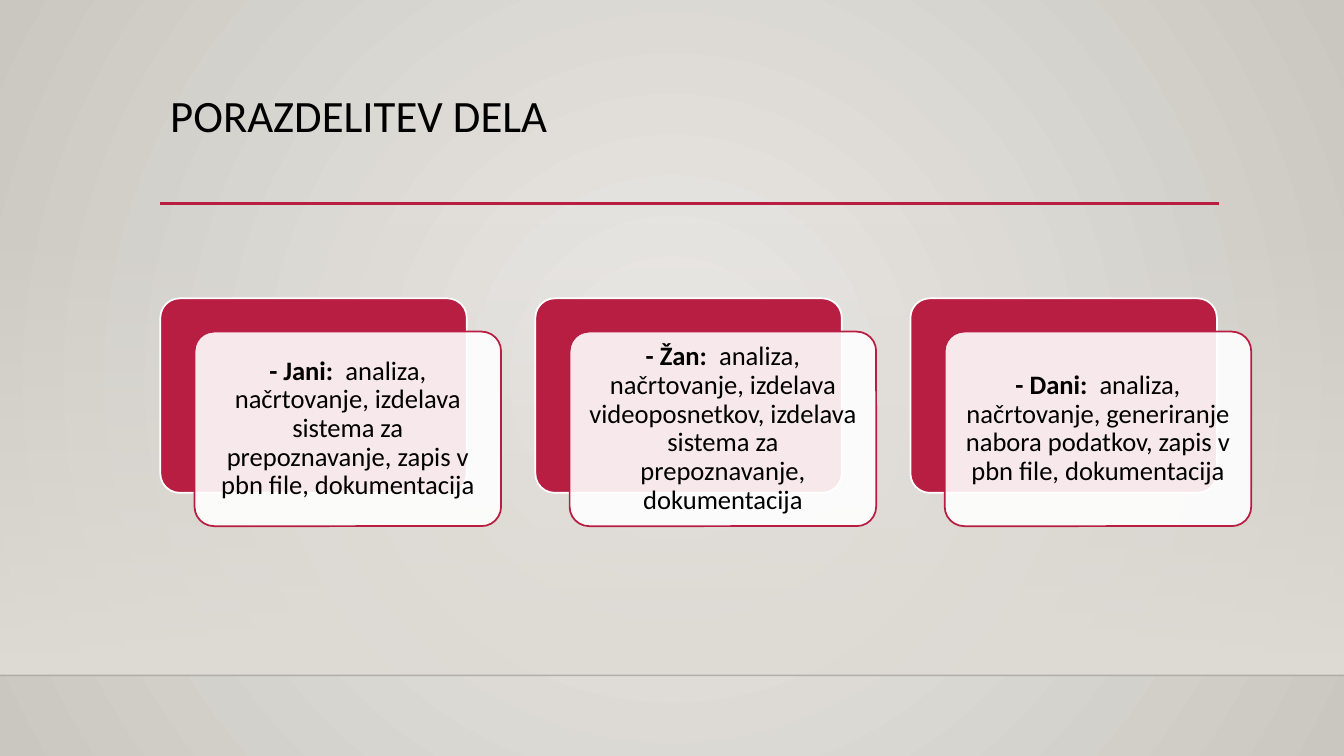
import pptx
import pptx.util
import pptx.dml.color
import pptx.enum.shapes
import pptx.enum.text
import pptx.oxml
import pptx.oxml.ns

WIDE, HIGH = 13.33, 7.5
EDGE = 1.59
RED = "B71E42"
FONT = "Calibri"
TASKS = [
    ("- Jani:  ", "analiza, načrtovanje, izdelava sistema za prepoznavanje, "
                  "zapis v pbn file, dokumentacija"),
    ("- Žan:  ", "analiza, načrtovanje, izdelava videoposnetkov, izdelava "
                 "sistema za prepoznavanje, dokumentacija"),
    ("- Dani:  ", "analiza, načrtovanje, generiranje nabora podatkov, "
                  "zapis v pbn file, dokumentacija"),
]

qn = pptx.oxml.ns.qn
inch = pptx.util.Inches
Shape = pptx.enum.shapes.MSO_SHAPE
Align = pptx.enum.text.PP_ALIGN
Anchor = pptx.enum.text.MSO_ANCHOR


def paint(color, code):
    """Set a colour from a hex string."""
    color.rgb = pptx.dml.color.RGBColor.from_string(code)


def fade(root, share):
    """Set the opacity, in percent, of the first colour under root."""
    color = next(root.iter(qn("a:srgbClr")))
    color.append(color.makeelement(qn("a:alpha"), {"val": str(share * 1000)}))


def blend(root, stops, shade):
    """Give the gradient under root its stops and its direction."""
    old = next(root.iter(qn("a:gradFill")))
    marks = "".join(
        f'<a:gs pos="{pos * 1000}"><a:srgbClr val="{code}">'
        f'<a:alpha val="{share * 1000}"/></a:srgbClr></a:gs>'
        for pos, code, share in stops)
    new = pptx.oxml.parse_xml(
        f'<a:gradFill {pptx.oxml.ns.nsdecls("a")} rotWithShape="1">'
        f'<a:gsLst>{marks}</a:gsLst>{shade}</a:gradFill>')
    old.getparent().replace(old, new)


def rule(slide, left, top, width, code, weight):
    """Draw a level line and return it."""
    line = slide.shapes.add_connector(
        pptx.enum.shapes.MSO_CONNECTOR.STRAIGHT,
        inch(left), inch(top), inch(left + width), inch(top))
    paint(line.line.color, code)
    line.line.width = pptx.util.Pt(weight)
    props = line._element.spPr
    props.append(props.makeelement(qn("a:effectLst"), {}))
    return line


def write(frame, runs, size, align, anchor, inset):
    """Fill a text frame with one paragraph of (text, bold) runs."""
    frame.word_wrap = True
    frame.vertical_anchor = anchor
    frame.margin_left = frame.margin_right = inch(inset[0])
    frame.margin_top = frame.margin_bottom = inch(inset[1])
    para = frame.paragraphs[0]
    para.alignment = align
    para.line_spacing = 0.9
    for text, bold in runs:
        run = para.add_run()
        run.text = text
        run.font.name = FONT
        run.font.size = pptx.util.Pt(size)
        run.font.bold = bold
        paint(run.font.color, "000000")


def stage(slide):
    """Paint the backdrop, the wall and the floor line."""
    slide.background.fill.gradient()
    blend(slide._element, [(0, "ECEAE7", 100), (100, "CAC7C1", 100)],
          '<a:path path="circle"><a:fillToRect l="50000" t="50000" '
          'r="50000" b="50000"/></a:path>')
    top, floor = 2.21, 6.7
    wall = slide.shapes.add_shape(
        Shape.RECTANGLE, 0, inch(top), inch(WIDE), inch(floor - top))
    wall.shadow.inherit = False
    wall.line.fill.background()
    wall.fill.gradient()
    blend(wall._element, [(0, "DFDBD5", 0), (100, "DFDBD5", 100)],
          '<a:lin ang="5400000" scaled="0"/>')
    fade(rule(slide, 0, floor, WIDE, "000001", 1)._element, 20)


def head(slide, left, top, width, height):
    """Place the title and the red line under it."""
    rule(slide, left, top + height, width, RED, 2.5)
    box = slide.shapes.add_textbox(
        inch(left), inch(top), inch(width), inch(height))
    write(box.text_frame, [("PORAZDELITEV DELA", False)], 32,
          Align.LEFT, Anchor.TOP, (0.1, 0.05))


def plate(slide, left, top, width, height, fill, edge):
    """Draw one rounded plate and return it."""
    shape = slide.shapes.add_shape(
        Shape.ROUNDED_RECTANGLE,
        inch(left), inch(top), inch(width), inch(height))
    shape.adjustments[0] = 0.1
    shape.shadow.inherit = False
    shape.fill.solid()
    paint(shape.fill.fore_color, fill)
    paint(shape.line.color, edge)
    shape.line.width = pptx.util.Pt(1.25)
    return shape


def cards(slide, left, top, width, height):
    """Lay out one double card per person in equal columns."""
    gap, drop = 0.34, 0.33
    pitch = (width + gap) / len(TASKS)
    wide, high = pitch - 2 * gap, height - drop
    for col, (name, work) in enumerate(TASKS):
        x = left + col * pitch
        plate(slide, x, top, wide, high, RED, "FFFFFF")
        front = plate(slide, x + gap, top + drop, wide, high, "FFFFFF", RED)
        fade(front._element, 90)
        write(front.text_frame, [(name, True), (work, False)], 19,
              Align.CENTER, Anchor.MIDDLE, (0.08, 0.08))


def main():
    """Build the slide and save it."""
    deck = pptx.Presentation()
    deck.slide_width, deck.slide_height = inch(WIDE), inch(HIGH)
    slide = deck.slides.add_slide(deck.slide_layouts[6])
    stage(slide)
    head(slide, EDGE, 0.88, 10.5, 1.14)
    cards(slide, EDGE, 2.96, 10.82, 2.26)
    deck.save("out.pptx")


if __name__ == "__main__":
    main()
